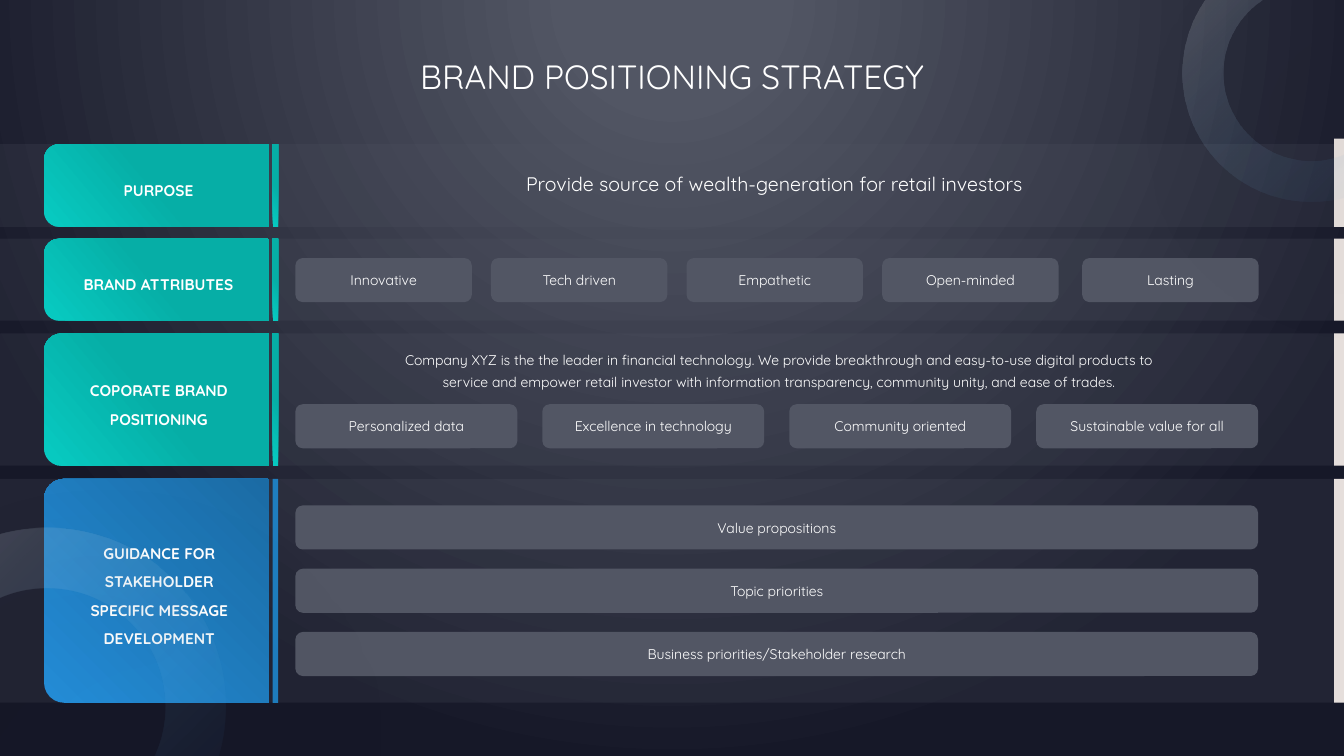
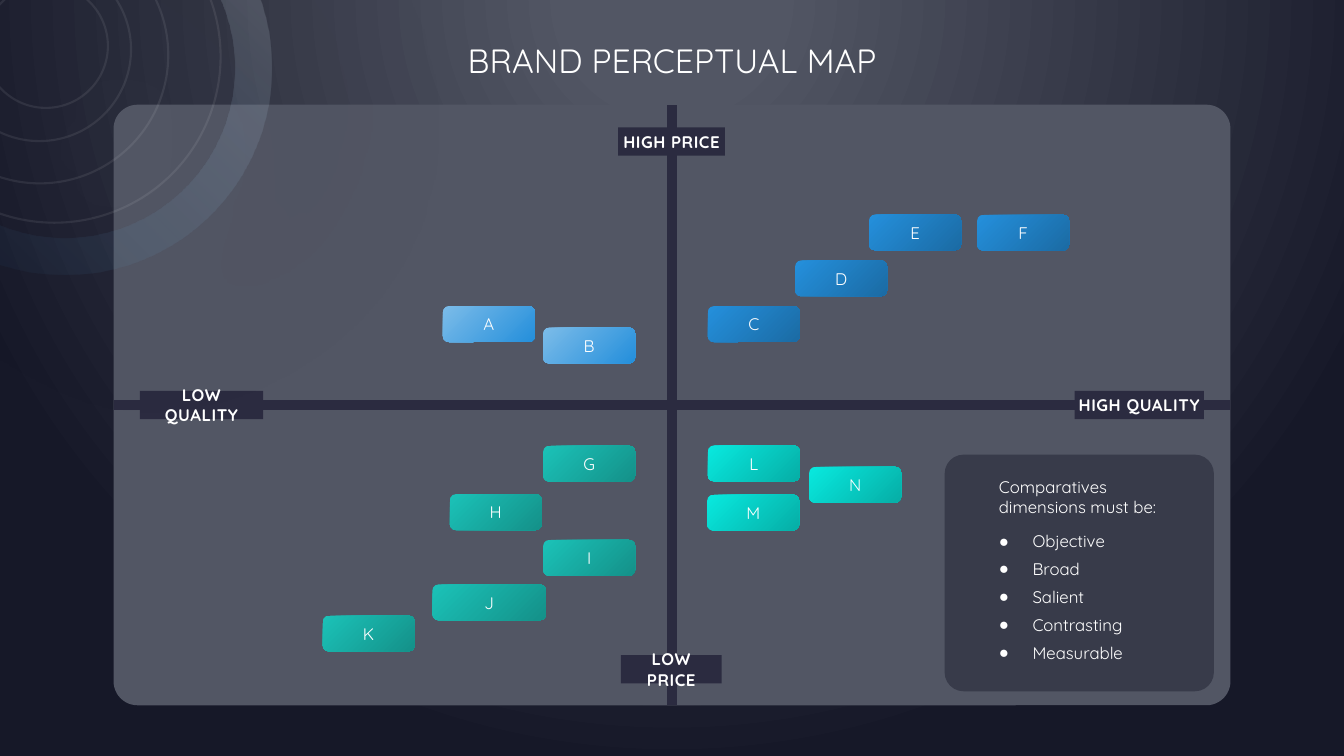
from dataclasses import dataclass

from lxml import etree
from pptx import Presentation
from pptx.dml.color import RGBColor
from pptx.enum.shapes import MSO_CONNECTOR, MSO_SHAPE
from pptx.enum.text import MSO_ANCHOR, MSO_AUTO_SIZE, PP_ALIGN
from pptx.oxml.ns import qn
from pptx.util import Pt

RECT = MSO_SHAPE.RECTANGLE
ROUNDED = MSO_SHAPE.ROUNDED_RECTANGLE
TAB = MSO_SHAPE.ROUND_2_SAME_RECTANGLE
DONUT = MSO_SHAPE.DONUT
OVAL = MSO_SHAPE.OVAL
STRAIGHT = MSO_CONNECTOR.STRAIGHT
CENTER, LEFT = PP_ALIGN.CENTER, PP_ALIGN.LEFT
TOP, MIDDLE = MSO_ANCHOR.TOP, MSO_ANCHOR.MIDDLE
NO_FIT = MSO_AUTO_SIZE.NONE
TITLE_ONLY, TITLE_AND_BODY = 5, 1
SIDE_TOP, SIDE_LEFT, SIDE_BOTTOM, SIDE_RIGHT = range(4)


@dataclass(frozen=True)
class Theme:
    font: str = "Quicksand"
    width: float = 960
    height: float = 540
    # Colours
    white: str = "FFFFFF"
    slate: str = "525664"
    card: str = "383B4A"
    axis: str = "2B2B40"
    edge: str = "E5DEDB"
    bar_blue: str = "1F7EBF"
    # Gradient stops: position, colour, opacity in percent
    backdrop: tuple = ((13, "525664", 100), (100, "161828", 100))
    teal: tuple = ((0, "07CBC2", 100), (51, "06AEA6", 100))
    blue: tuple = ((2, "248FDB", 100), (100, "1B6BA4", 100))
    sky: tuple = ((0, "7CBCE9", 100), (100, "248FDB", 100))
    green: tuple = ((2, "1BC1B7", 100), (100, "149189", 100))
    aqua: tuple = ((2, "08E8DE", 100), (100, "06AEA6", 100))
    glass: tuple = ((2, "E5DEDB", 21), (100, "248FDB", 0))
    # Shadows: colour, opacity, blur, distance, direction
    ring_shadow: tuple = ("000000", 40, 100, 65, 45)
    orbit_shadow: tuple = ("3553D3", 5, 52, 4, 90)
    # Type sizes
    title_size: float = 24
    lead_size: float = 14
    map_size: float = 12
    tab_size: float = 11
    small_size: float = 10


THEME = Theme()


def add_xml(parent, tag, **attributes):
    values = {key: str(value) for key, value in attributes.items()}
    return etree.SubElement(parent, qn(tag), values)


def set_values(target, values):
    for name, value in values.items():
        setattr(target, name, value)


def set_opacity(root, percent):
    add_xml(next(root.iter(qn("a:srgbClr"))), "a:alpha", val=percent * 1000)


def paint_gradient(fill, root, stops, angle=None):
    """Linear when an angle is given, otherwise circular from above the slide."""
    fill.background()
    plain = next(root.iter(qn("a:noFill")))
    gradient = plain.makeelement(qn("a:gradFill"), {"rotWithShape": "1"})
    stop_list = add_xml(gradient, "a:gsLst")
    for position, color, opacity in stops:
        stop = add_xml(stop_list, "a:gs", pos=position * 1000)
        tone = add_xml(stop, "a:srgbClr", val=color)
        if opacity < 100:
            add_xml(tone, "a:alpha", val=opacity * 1000)
    if angle is None:
        circle = add_xml(gradient, "a:path", path="circle")
        add_xml(circle, "a:fillToRect", l=50000, t=-80000, r=50000, b=180000)
    else:
        add_xml(gradient, "a:lin", ang=angle * 60000, scaled=0)
    plain.getparent().replace(plain, gradient)


class Deck:
    def __init__(self, theme):
        self.theme = theme
        self.show = Presentation()
        set_values(self.show, {"slide_width": Pt(theme.width),
                               "slide_height": Pt(theme.height)})
        self.slide = None

    def new_slide(self, layout, title, top):
        self.slide = self.show.slides.add_slide(self.show.slide_layouts[layout])
        paint_gradient(self.slide.background.fill, self.slide.element,
                       self.theme.backdrop)
        heading = self.slide.shapes.title
        self.place(heading, (80, top, 800, 28.8))
        self.set_text(heading, [title], self.theme.title_size, inset=0)

    def place(self, shape, box):
        sides = ("left", "top", "width", "height")
        set_values(shape, dict(zip(sides, map(Pt, box))))

    def set_text(self, shape, lines, size, bold=False, align=CENTER,
                 anchor=MIDDLE, wrap=True, spacing=None, inset=None):
        frame = shape.text_frame
        set_values(frame, {"word_wrap": wrap, "auto_size": NO_FIT,
                           "vertical_anchor": anchor})
        if inset is not None:
            for side in ("left", "top", "right", "bottom"):
                setattr(frame, f"margin_{side}", Pt(inset))
        frame.text = "\n".join(lines)
        for paragraph in frame.paragraphs:
            set_values(paragraph, {"alignment": align, "space_before": Pt(0),
                                   "line_spacing": Pt(spacing) if spacing else 1.0})
            for run in paragraph.runs:
                set_values(run.font, {"name": self.theme.font, "size": Pt(size),
                                      "bold": bold})
                run.font.color.rgb = RGBColor.from_string(self.theme.white)
        return frame

    def shape(self, kind, box, fill=None, angle=45, opacity=100, corner=None,
              shadow=None):
        shape = self.slide.shapes.add_shape(kind, *map(Pt, box))
        shape.shadow.inherit = False
        properties = shape.element.spPr
        if fill is None:
            shape.fill.background()
        elif isinstance(fill, tuple):
            paint_gradient(shape.fill, properties, fill, angle)
        else:
            shape.fill.solid()
            shape.fill.fore_color.rgb = RGBColor.from_string(fill)
            if opacity < 100:
                set_opacity(properties, opacity)
        shape.line.fill.background()
        if corner is not None:
            shape.adjustments[0] = corner
        if shadow:
            color, strength, blur, distance, direction = shadow
            cast = add_xml(properties.find(qn("a:effectLst")), "a:outerShdw",
                           blurRad=Pt(blur), dist=Pt(distance),
                           dir=direction * 60000, algn="ctr", rotWithShape=0)
            add_xml(cast, "a:srgbClr", val=color)
            set_opacity(cast, strength)
        return shape

    def upright(self, kind, box, fill, angle, corner=None):
        """A shape turned by 270 degrees that covers the given box."""
        left, top, width, height = box
        turned = (left + (width - height) / 2, top + (height - width) / 2,
                  height, width)
        shape = self.shape(kind, turned, fill, angle, corner=corner)
        shape.rotation = 270
        return shape

    def row_tab(self, box, lines, fill, angle, corner):
        tab = self.upright(TAB, box, fill, angle, corner)
        tab.adjustments[1] = 0
        self.set_text(tab, lines, self.theme.tab_size, bold=True, wrap=False,
                      spacing=20.4)
        next(tab.element.iter(qn("a:bodyPr"))).set("vert", "vert")

    def pills(self, names, left, top, width, step_x=0, step_y=0):
        for i, name in enumerate(names):
            box = (left + i * step_x, top + i * step_y, width, 31.5)
            pill = self.shape(ROUNDED, box, self.theme.slate)
            self.set_text(pill, [name], self.theme.small_size, wrap=False)

    def text(self, box, content, size):
        note = self.slide.shapes.add_textbox(*map(Pt, box))
        self.set_text(note, [content], size, anchor=TOP, spacing=15.6, inset=0)

    def ring(self, left, top, size, thickness, angle=45):
        self.shape(DONUT, (left, top, size, size), self.theme.glass, angle,
                   corner=thickness, shadow=self.theme.ring_shadow)

    def orbit(self, left, top, size):
        orbit = self.shape(OVAL, (left, top, size, size),
                           shadow=self.theme.orbit_shadow)
        orbit.line.color.rgb = RGBColor.from_string(self.theme.white)
        orbit.line.width = Pt(1.5)
        set_opacity(orbit.element.spPr.find(qn("a:ln")), 8)

    def axis_line(self, panel, start, end):
        axis = self.slide.shapes.add_connector(STRAIGHT, 0, 0, 0, 0)
        axis.begin_connect(panel, start)
        axis.end_connect(panel, end)
        axis.line.color.rgb = RGBColor.from_string(self.theme.axis)
        axis.line.width = Pt(7)
        add_xml(axis.element.spPr, "a:effectLst")

    def axis_label(self, name, left, top, width):
        label = self.shape(RECT, (left, top, width, 20.2), self.theme.axis)
        self.set_text(label, [name], self.theme.map_size, bold=True, wrap=False,
                      inset=2.9)
        for line_break in label.element.iter(qn("a:br")):
            add_xml(line_break, "a:rPr", sz=self.theme.map_size * 100)
        for letters in label.element.iter(qn("a:rPr")):
            letters.set("spc", "40")

    def checklist(self, box, intro, points):
        body = self.slide.placeholders[1]
        self.place(body, box)
        body.element.getparent().append(body.element)
        frame = self.set_text(body, [intro, *points], self.theme.map_size,
                              align=LEFT, anchor=TOP, inset=0)
        for i, paragraph in enumerate(frame.paragraphs[1:]):
            paragraph.space_before = Pt(5.5 if i else 10)
        for i, properties in enumerate(body.element.iter(qn("a:pPr"))):
            indent = Pt(24) if i else 0
            properties.set("marL", str(indent))
            properties.set("indent", str(-indent))
            if i:
                add_xml(properties, "a:buFont", typeface="Arial")
                add_xml(properties, "a:buChar", char="●")
            else:
                add_xml(properties, "a:buNone")


def strategy_slide(deck):
    theme = deck.theme
    deck.new_slide(TITLE_ONLY, "BRAND POSITIONING STRATEGY", 39.6)

    # Rows: top, height, tab corner, gradient, angle, bar fill, tab lines
    teal = (theme.teal, 50, theme.teal)
    rows = [
        (103, 59, 0.18, *teal, ["PURPOSE"]),
        (170.5, 58.5, 0.18, *teal, ["BRAND ATTRIBUTES"]),
        (238.2, 94.5, 0.13, *teal, ["COPORATE BRAND", "POSITIONING"]),
        (342, 160, 0.09, theme.blue, 45, theme.bar_blue,
         ["GUIDANCE FOR", "STAKEHOLDER", "SPECIFIC MESSAGE", "DEVELOPMENT"]),
    ]
    for top, height, corner, fill, angle, bar_fill, lines in rows:
        deck.shape(RECT, (0, top, theme.width, height), theme.slate, opacity=20)
        rise = 4 if top == rows[0][0] else 0
        deck.shape(RECT, (953, top - rise, 7, height + rise), theme.edge)
        deck.row_tab((31.5, top, 160.5, height), lines, fill, angle, corner)
        deck.upright(RECT, (194.8, top, 3.9, height), bar_fill, angle)

    # Row contents
    deck.text((329, 123.8, 448.6, 16),
              "Provide source of wealth-generation for retail investors",
              theme.lead_size)
    deck.pills(["Innovative", "Tech driven", "Empathetic", "Open-minded"],
               211, 184.3, 126, step_x=139.7)
    deck.pills(["Lasting"], 773, 184.3, 126)
    deck.text((275, 247.7, 562.3, 31),
              "Company XYZ is the the leader in financial technology. We provide "
              "breakthrough and easy-to-use digital products to service and "
              "empower retail investor with information transparency, community "
              "unity, and ease of trades.", theme.small_size)
    deck.pills(["Personalized data", "Excellence in technology",
                "Community oriented", "Sustainable value for all"],
               211, 288.7, 158.5, step_x=176.4)
    deck.pills(["Value propositions", "Topic priorities",
                "Business priorities/Stakeholder research"],
               211, 361, 687.6, step_y=45.2)

    # Corner rings
    deck.ring(845, -39.6, 183.6, 0.16)
    deck.ring(-93.6, 376.6, 254.9, 0.17)


def perceptual_map_slide(deck):
    theme = deck.theme
    deck.new_slide(TITLE_AND_BODY, "BRAND PERCEPTUAL MAP", 28.8)

    # Map panel and axes
    panel = deck.shape(ROUNDED, (81.1, 74.8, 797.8, 429), theme.slate, corner=0.04)
    deck.axis_line(panel, SIDE_BOTTOM, SIDE_TOP)
    deck.axis_line(panel, SIDE_RIGHT, SIDE_LEFT)
    for label in [("LOW\vQUALITY", 100, 279.2, 88), ("HIGH QUALITY", 767.7, 279.2, 92.3),
                  ("HIGH PRICE", 441.5, 90.9, 76.4), ("LOW\vPRICE", 443.5, 468, 72)]:
        deck.axis_label(*label)

    # Criteria card
    deck.shape(ROUNDED, (674.8, 324.8, 192.3, 169), theme.card, corner=0.08)
    deck.checklist((713.5, 340.6, 134.6, 146), "Comparatives dimensions must be:",
                   ["Objective", "Broad", "Salient", "Contrasting", "Measurable"])

    # Brands by quadrant: left, top
    quadrants = [
        (theme.sky, {"A": (316.4, 218.7), "B": (388, 234)}),
        (theme.blue, {"C": (505.6, 218.7), "D": (568, 186), "E": (620.8, 153.2),
                      "F": (698, 153.4)}),
        (theme.green, {"G": (388, 318.4), "H": (321.3, 353), "I": (388, 385.7),
                       "J": (308.9, 417.5), "K": (230.5, 439.7)}),
        (theme.aqua, {"L": (505.6, 318.2), "M": (505.2, 353.3), "N": (578, 333.5)}),
    ]
    for fill, brands in quadrants:
        for name, (left, top) in brands.items():
            width = 81 if name == "J" else 65.7
            tile = deck.shape(ROUNDED, (left, top, width, 25.6), fill)
            deck.set_text(tile, [name], theme.map_size)

    # Corner ring and orbits
    deck.ring(-101.5, -99.4, 295.2, 0.09, angle=135)
    for orbit in [(-80, -78.5, 237.6), (-63.4, -52.6, 183.6),
                  (-37.4, -30.2, 131), (-11.5, -11.5, 88.6)]:
        deck.orbit(*orbit)


def main():
    deck = Deck(THEME)
    strategy_slide(deck)
    perceptual_map_slide(deck)
    deck.show.save("out.pptx")


if __name__ == "__main__":
    main()
